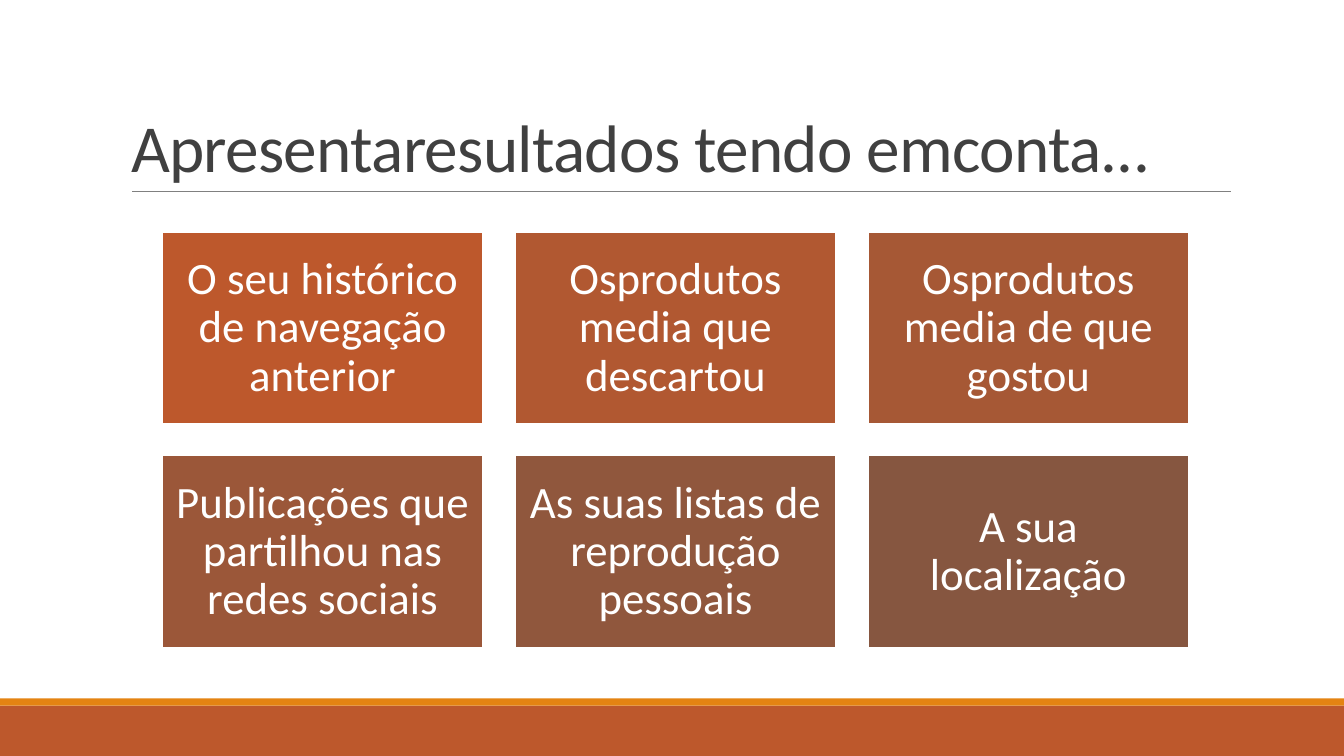
from pptx import Presentation
from pptx.dml.color import RGBColor
from pptx.enum.shapes import MSO_CONNECTOR as Connector, MSO_SHAPE as Preset
from pptx.enum.text import MSO_ANCHOR as Anchor, MSO_AUTO_SIZE as AutoSize, PP_ALIGN as Align
from pptx.oxml.ns import qn
from pptx.util import Inches, Pt

COLORS = {
    "background": "FFFFFF",
    "band": "BD582C",
    "stripe": "E48312",
    "rule": "808080",
    "title": "404040",
    "white": "FFFFFF",
}
CARDS = [
    ("O seu histórico de navegação anterior", "BD582C"),
    ("Osprodutos media que descartou", "B15831"),
    ("Osprodutos media de que gostou", "A65835"),
    ("Publicações que partilhou nas redes sociais", "9B5739"),
    ("As suas listas de reprodução pessoais", "90573D"),
    ("A sua localização", "865640"),
]
COLUMNS = 3
CARD_LEFT, CARD_TOP = 1.61, 2.3
CARD_WIDTH, CARD_HEIGHT = 3.18, 1.91
STEP_X, STEP_Y = 3.5, 2.22


def rgb(value):
    return RGBColor.from_string(value)


def write(frame, text, size, color, font="Calibri", align=Align.LEFT,
          anchor=Anchor.MIDDLE, line_spacing=1.0, tracking=None, margins=(0.1, 0.05)):
    """Put one formatted paragraph into a text frame."""
    frame.word_wrap = True
    frame.auto_size = AutoSize.NONE
    frame.vertical_anchor = anchor
    frame.margin_left = frame.margin_right = Inches(margins[0])
    frame.margin_top = frame.margin_bottom = Inches(margins[1])
    paragraph = frame.paragraphs[0]
    paragraph.alignment = align
    paragraph.line_spacing = line_spacing
    run = paragraph.add_run()
    run.text = text
    run.font.name = font
    run.font.size = Pt(size)
    run.font.color.rgb = rgb(color)
    if tracking is not None:
        run.font._element.set("spc", str(round(tracking * 100)))


class SlideBuilder:
    def __init__(self, presentation):
        self.slide = presentation.slides.add_slide(presentation.slide_layouts[5])
        fill = self.slide.background.fill
        fill.solid()
        fill.fore_color.rgb = rgb(COLORS["background"])

    def title(self, text, left, top, width, height):
        shape = self.slide.shapes.title
        shape.left, shape.top = Inches(left), Inches(top)
        shape.width, shape.height = Inches(width), Inches(height)
        write(shape.text_frame, text, 48, COLORS["title"], anchor=Anchor.BOTTOM,
              line_spacing=0.85, tracking=-0.5)

    def rectangle(self, left, top, width, height, color, outline=None):
        shape = self.slide.shapes.add_shape(
            Preset.RECTANGLE, Inches(left), Inches(top), Inches(width), Inches(height))
        shape.shadow.inherit = False
        shape.fill.solid()
        shape.fill.fore_color.rgb = rgb(color)
        if outline:
            shape.line.color.rgb = rgb(outline)
            shape.line.width = Pt(1.25)
        else:
            shape.line.fill.background()
        return shape

    def card(self, text, left, top, color):
        shape = self.rectangle(left, top, CARD_WIDTH, CARD_HEIGHT, color, COLORS["white"])
        write(shape.text_frame, text, 32, COLORS["white"], align=Align.CENTER,
              line_spacing=0.9, margins=(0.13, 0.13))

    def rule(self, left, right, top):
        line = self.slide.shapes.add_connector(
            Connector.STRAIGHT, Inches(left), Inches(top), Inches(right), Inches(top))
        line.line.color.rgb = rgb(COLORS["rule"])
        line.line.width = Pt(0.5)
        properties = line._element.spPr
        properties.append(properties.makeelement(qn("a:effectLst"), {}))


def main():
    presentation = Presentation()
    presentation.slide_width = Inches(13.33)
    presentation.slide_height = Inches(7.5)
    builder = SlideBuilder(presentation)

    # Footer bands
    builder.rectangle(0, 7, 13.33, 0.5, COLORS["band"])
    builder.rectangle(0, 6.93, 13.33, 0.07, COLORS["stripe"])

    # Title and rule
    builder.title("Apresentaresultados tendo emconta...", 1.2, 0.31, 11, 1.59)
    builder.rule(1.31, 12.21, 1.9)

    # Grid of cards
    for index, (text, color) in enumerate(CARDS):
        row, column = divmod(index, COLUMNS)
        builder.card(text, CARD_LEFT + column * STEP_X, CARD_TOP + row * STEP_Y, color)

    presentation.save("out.pptx")


if __name__ == "__main__":
    main()
